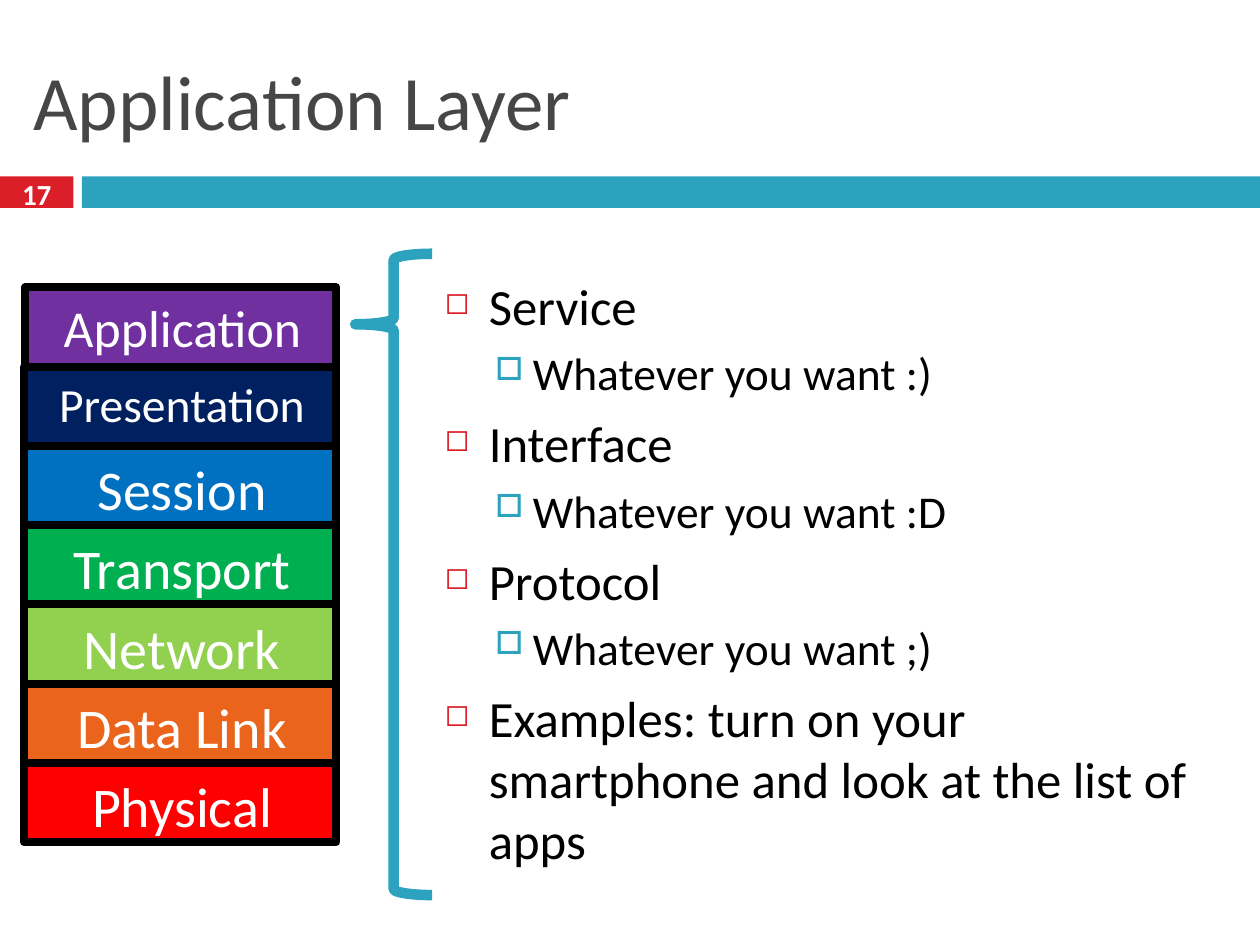
"""Build the Application Layer slide: a seven-layer stack, a brace and a bulleted list."""
from dataclasses import dataclass

import lxml.etree
import pptx
import pptx.dml.color
import pptx.enum.shapes
import pptx.enum.text
import pptx.oxml.ns
import pptx.util

Pt = pptx.util.Pt
SHAPE = pptx.enum.shapes.MSO_SHAPE
ALIGN = pptx.enum.text.PP_ALIGN
ANCHOR = pptx.enum.text.MSO_ANCHOR
FONT = "Calibri"
COLORS = {
    "accent": "2DA2BF", "number": "DA1F28", "title": "464646",
    "black": "000000", "white": "FFFFFF",
    "Application": "7030A0", "Presentation": "002060", "Session": "0070C0",
    "Transport": "00B050", "Network": "92D050", "Data Link": "EB641B",
    "Physical": "FF0000",
}


@dataclass(frozen=True)
class Box:
    left: float
    top: float
    width: float
    height: float

    def emu(self) -> tuple:
        return Pt(self.left), Pt(self.top), Pt(self.width), Pt(self.height)


@dataclass(frozen=True)
class Layer:
    name: str
    size: float = 32
    left: float = 13.7


@dataclass(frozen=True)
class Level:
    size: float
    before: float
    margin: float
    hanging: float
    char: str
    color: str
    percent: int


LAYERS = [Layer("Application", 29.6, 14.4), Layer("Presentation", 27.2), Layer("Session"),
          Layer("Transport"), Layer("Network"), Layer("Data Link"), Layer("Physical")]
STACK_TOP, STACK_RIGHT, LAYER_HEIGHT = 164.2, 192.2, 45.3
LEVELS = [Level(29, 7, 25.2, 25.2, "◻", "number", 60),
          Level(26, 5.5, 50.4, 21.6, "□", "accent", 70)]
BULLETS = [
    (0, "Service"), (1, "Whatever you want :)"),
    (0, "Interface"), (1, "Whatever you want :D"),
    (0, "Protocol"), (1, "Whatever you want ;)"),
    (0, "Examples: turn on your smartphone and look at the list of apps"),
]


def rgb(name: str) -> pptx.dml.color.RGBColor:
    return pptx.dml.color.RGBColor.from_string(COLORS[name])


def apply(target, **values) -> None:
    for name, value in values.items():
        setattr(target, name, value)


def add_shape(s, kind, box: Box, fill: str = "", line: str = "", weight: float = 0):
    sp = s.shapes.add_shape(kind, *box.emu())
    sp.shadow.inherit = False
    if fill:
        sp.fill.solid()
        sp.fill.fore_color.rgb = rgb(fill)
    else:
        sp.fill.background()
    if line:
        sp.line.color.rgb = rgb(line)
        sp.line.width = Pt(weight)
    else:
        sp.line.fill.background()
    return sp


def add_frame(s, box: Box, **values):
    tf = s.shapes.add_textbox(*box.emu()).text_frame
    apply(tf, word_wrap=True, **values)
    return tf


def write(p, text: str, size: float, color: str, bold: bool = False) -> None:
    r = p.add_run()
    r.text = text
    apply(r.font, name=FONT, size=Pt(size), bold=bold)
    r.font.color.rgb = rgb(color)


def add_label(s, box: Box, text: str, size: float, color: str,
              align=ALIGN.CENTER, bold: bool = False, **values) -> None:
    p = add_frame(s, box, **values).paragraphs[0]
    p.alignment = align
    write(p, text, size, color, bold)


def set_bullet(p, level: Level) -> None:
    p.space_before = Pt(level.before)
    pPr = p._p.get_or_add_pPr()
    pPr.set("marL", str(Pt(level.margin)))
    pPr.set("indent", str(-Pt(level.hanging)))

    def sub(parent, tag: str, **attrs):
        return lxml.etree.SubElement(parent, pptx.oxml.ns.qn(tag), attrs)

    sub(sub(pPr, "a:buClr"), "a:srgbClr", val=COLORS[level.color])
    sub(pPr, "a:buSzPct", val=str(level.percent * 1000))
    sub(pPr, "a:buChar", char=level.char)


def add_bullets(s, box: Box) -> None:
    tf = add_frame(s, box, vertical_anchor=ANCHOR.MIDDLE)
    for i, (depth, text) in enumerate(BULLETS):
        p = tf.add_paragraph() if i else tf.paragraphs[0]
        p.level = depth
        set_bullet(p, LEVELS[depth])
        write(p, text, LEVELS[depth].size, "black")


def add_layer(s, layer: Layer, top: float) -> None:
    width = STACK_RIGHT - layer.left
    add_shape(s, SHAPE.RECTANGLE, Box(layer.left, top, width, LAYER_HEIGHT),
              layer.name, "black", 4.5)
    add_label(s, Box(layer.left - 2.2, top, width - 2.2, LAYER_HEIGHT), layer.name,
              layer.size, "white", margin_left=Pt(15.8), margin_top=Pt(5))


def main() -> None:
    prs = pptx.Presentation()
    apply(prs, slide_width=Pt(720), slide_height=Pt(540))
    s = prs.slides.add_slide(prs.slide_layouts[6])
    add_shape(s, SHAPE.RECTANGLE, Box(0, 100.8, 42, 18), "number")
    add_shape(s, SHAPE.RECTANGLE, Box(46.8, 100.8, 673.2, 18), "accent")
    add_label(s, Box(12, 18, 696, 78), "Application Layer", 44, "title",
              ALIGN.LEFT, vertical_anchor=ANCHOR.MIDDLE)
    add_label(s, Box(0, 98.8, 42, 24), "17", 16.6, "white", bold=True,
              vertical_anchor=ANCHOR.MIDDLE)
    add_bullets(s, Box(247, 126, 461, 402))
    for i, layer in enumerate(LAYERS):
        add_layer(s, layer, STACK_TOP + i * LAYER_HEIGHT)
    brace = add_shape(s, SHAPE.LEFT_BRACE, Box(203, 145, 44, 366.5),
                      line="accent", weight=6)
    brace.adjustments[0], brace.adjustments[1] = 0.08, 0.11
    prs.save("out.pptx")


if __name__ == "__main__":
    main()
